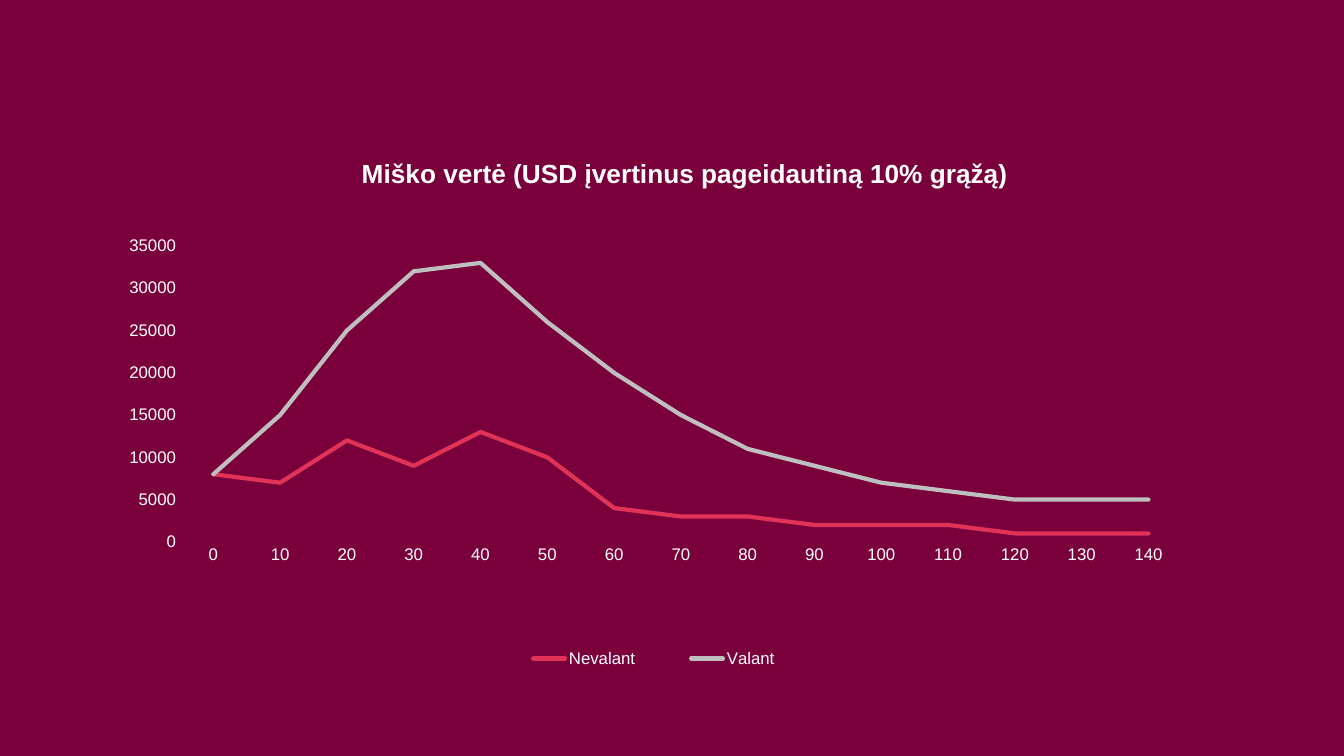
from dataclasses import dataclass

from lxml.etree import SubElement
from pptx import Presentation
from pptx.chart.chart import Chart
from pptx.chart.data import CategoryChartData
from pptx.dml.color import RGBColor
from pptx.enum.chart import XL_CHART_TYPE, XL_LEGEND_POSITION, XL_TICK_MARK
from pptx.oxml.ns import qn
from pptx.slide import Slide
from pptx.text.text import Font
from pptx.util import Emu, Pt

BURGUNDY = RGBColor(0x7A, 0x00, 0x3B)
WHITE = RGBColor(0xFF, 0xFF, 0xFF)
RED = RGBColor(0xE0, 0x33, 0x57)
GREY = RGBColor(0xBF, 0xBF, 0xBF)

AXIS_FORMAT = {
    "has_major_gridlines": False,
    "major_tick_mark": XL_TICK_MARK.NONE,
    "minor_tick_mark": XL_TICK_MARK.NONE,
}
VALUE_SCALE = {"minimum_scale": 0, "maximum_scale": 35000, "major_unit": 5000}


@dataclass(frozen=True)
class ForestValue:
    name: str
    color: RGBColor
    usd: tuple[int, ...]


@dataclass(frozen=True)
class Placement:
    """Position of a chart part, in px from the chart's corner."""
    tag: str
    index: int
    lengths: dict[str, int]
    inner: bool = False


CHART_WIDTH, CHART_HEIGHT = 1054, 532
AGES = [str(age) for age in range(0, 141, 10)]
FOREST_VALUES = (
    ForestValue("Nevalant", RED, (
        8000, 7000, 12000, 9000, 13000, 10000, 4000, 3000,
        3000, 2000, 2000, 2000, 1000, 1000, 1000)),
    ForestValue("Valant", GREY, (
        8000, 15000, 25000, 32000, 33000, 26000, 20000, 15000,
        11000, 9000, 7000, 6000, 5000, 5000, 5000)),
)
PLACEMENTS = (
    Placement("c:title", 1, {"x": 229, "y": 6}),
    Placement("c:plotArea", 0,
              {"x": 52, "y": 101, "w": 1002, "h": 296}, inner=True),
    Placement("c:legend", 1, {"x": 355, "y": 495, "w": 342, "h": 37}),
)


def px(count: int) -> Emu:
    return Emu(round(count * 914400 / 100.8))


def format_font(font: Font, size: float, bold: bool = False) -> None:
    for key, value in {"name": "Arial", "size": Pt(size), "bold": bold}.items():
        setattr(font, key, value)
    font.color.rgb = WHITE


def place(chart: Chart, placement: Placement) -> None:
    part = next(chart._chartSpace.iter(qn(placement.tag)))
    for automatic in part.findall(qn("c:layout")):
        part.remove(automatic)
    layout = SubElement(part, qn("c:layout"))
    manual = SubElement(layout, qn("c:manualLayout"))
    if placement.inner:
        SubElement(manual, qn("c:layoutTarget")).set("val", "inner")
    for side in ("x", "y"):
        SubElement(manual, qn(f"c:{side}Mode")).set("val", "edge")
    for side, length in placement.lengths.items():
        whole = CHART_WIDTH if side in "xw" else CHART_HEIGHT
        SubElement(manual, qn(f"c:{side}")).set("val", str(length / whole))
    part.insert(placement.index, layout)


def add_value_chart(slide: Slide) -> None:
    data = CategoryChartData(number_format="0")
    data.categories = AGES
    for forest in FOREST_VALUES:
        data.add_series(forest.name, forest.usd)
    chart = slide.shapes.add_chart(
        XL_CHART_TYPE.LINE, px(128), px(145),
        px(CHART_WIDTH), px(CHART_HEIGHT), data).chart
    format_font(chart.font, 10)

    # Title
    heading = chart.chart_title.text_frame
    heading.text = "Miško vertė (USD įvertinus pageidautiną 10% grąžą)"
    format_font(heading.paragraphs[0].runs[0].font, 18.7, bold=True)

    # Lines with round ends and joins
    for series, forest in zip(chart.plots[0].series, FOREST_VALUES):
        series.smooth = False
        series.format.line.color.rgb = forest.color
        series.format.line.width = Pt(3)
        stroke = next(series._element.iter(qn("a:ln")))
        stroke.set("cap", "rnd")
        SubElement(stroke, qn("a:round"))
    chart.plots[0].vary_by_categories = False

    # Axes
    for axis in (chart.category_axis, chart.value_axis):
        for key, value in AXIS_FORMAT.items():
            setattr(axis, key, value)
        axis.format.line.fill.background()
        format_font(axis.tick_labels.font, 12)
    for key, value in VALUE_SCALE.items():
        setattr(chart.value_axis, key, value)

    # Legend
    chart.has_legend = True
    chart.legend.position = XL_LEGEND_POSITION.BOTTOM
    chart.legend.include_in_layout = False
    format_font(chart.legend.font, 12)

    for placement in PLACEMENTS:
        place(chart, placement)


def main() -> None:
    deck = Presentation()
    deck.slide_width, deck.slide_height = px(1344), px(756)
    slide = deck.slides.add_slide(deck.slide_layouts[6])
    slide.background.fill.solid()
    slide.background.fill.fore_color.rgb = BURGUNDY
    add_value_chart(slide)
    deck.save("out.pptx")


if __name__ == "__main__":
    main()
